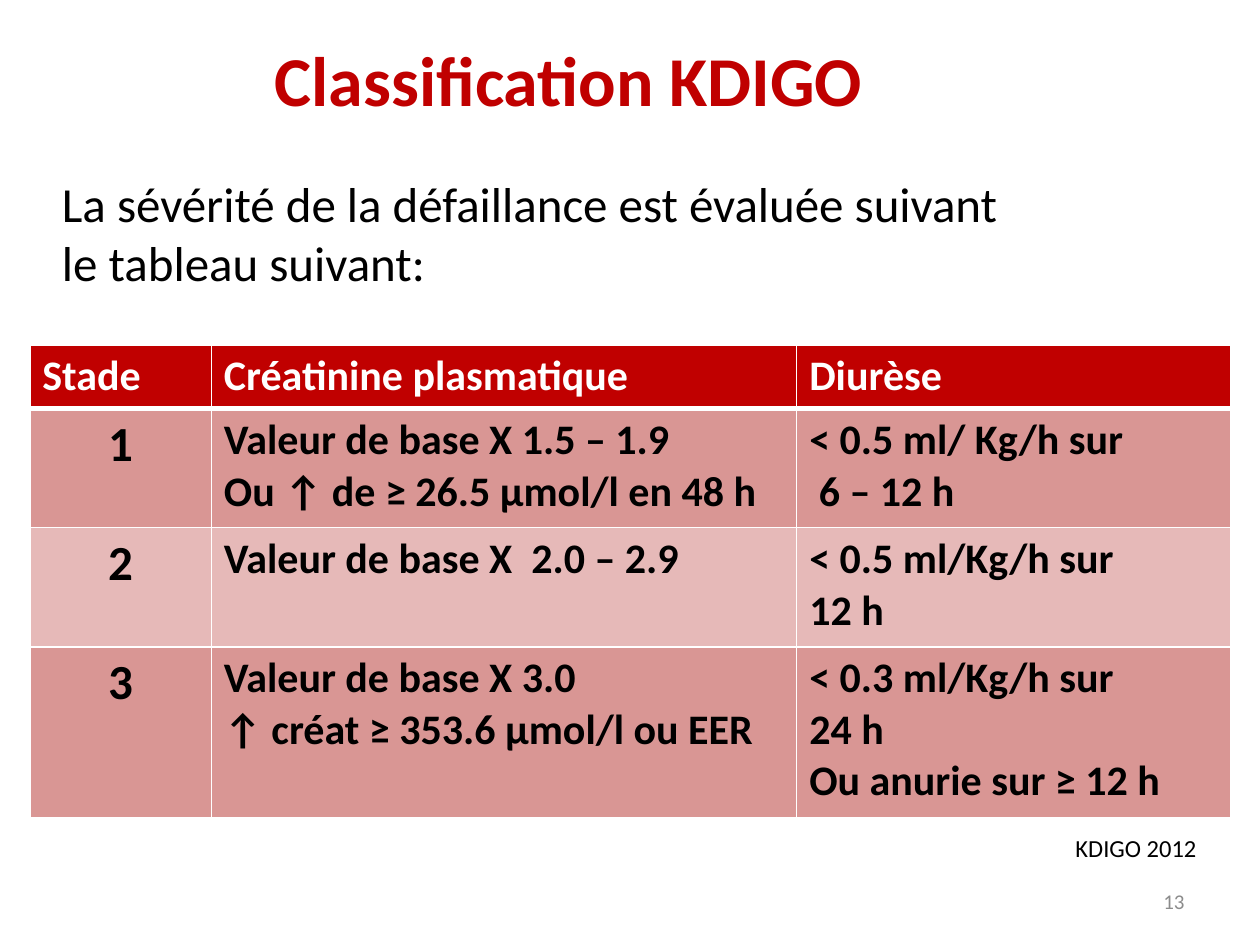
from dataclasses import dataclass

from lxml import etree
from pptx import Presentation
from pptx import util as u
from pptx.dml.color import RGBColor
from pptx.enum import text
from pptx.oxml import ns

RED = RGBColor(0xC0, 0x00, 0x00)
ROSE = RGBColor(0xD9, 0x96, 0x94)
PALE_ROSE = RGBColor(0xE6, 0xB9, 0xB8)
WHITE = RGBColor(0xFF, 0xFF, 0xFF)
BLACK = RGBColor(0x00, 0x00, 0x00)
GREY = RGBColor(0x8C, 0x8C, 0x8C)
FONT = "Calibri"
LEFT, CENTER, RIGHT = text.PP_ALIGN.LEFT, text.PP_ALIGN.CENTER, text.PP_ALIGN.RIGHT
TOP, MIDDLE = text.MSO_ANCHOR.TOP, text.MSO_ANCHOR.MIDDLE


@dataclass(frozen=True)
class Area:
    left: float
    top: float
    width: float
    height: float

    def lengths(self) -> tuple:
        return tuple(u.Cm(v) for v in (self.left, self.top, self.width, self.height))


@dataclass(frozen=True)
class Stage:
    cells: tuple
    height: float
    fill: RGBColor


COLUMN_WIDTHS = (3.66, 11.8, 8.75)
HEADER = Stage(("Stade", "Créatinine plasmatique", "Diurèse"), 1.27, RED)
STAGES = (
    Stage(("1", "Valeur de base X 1.5 – 1.9\nOu ↑ de ≥ 26.5 µmol/l en 48 h",
           "< 0.5 ml/ Kg/h sur\n 6 – 12 h"), 2.4, ROSE),
    Stage(("2", "Valeur de base X  2.0 – 2.9",
           "< 0.5 ml/Kg/h sur\n12 h"), 2.4, PALE_ROSE),
    Stage(("3", "Valeur de base X 3.0\n↑ créat ≥ 353.6 µmol/l ou EER",
           "< 0.3 ml/Kg/h sur\n24 h\nOu anurie sur ≥ 12 h"), 3.45, ROSE),
)


def write(frame, content: str, *, size: float, color: RGBColor = BLACK,
          bold: bool = False, align=LEFT) -> None:
    for index, line in enumerate(content.split("\n")):
        para = frame.add_paragraph() if index else frame.paragraphs[0]
        para.alignment = align
        span = para.add_run()
        span.text = line
        span.font.name = FONT
        span.font.size = u.Pt(size)
        span.font.bold = bold
        span.font.color.rgb = color


def add_text(page, area: Area, content: str, *, anchor=TOP, wrap: bool = True,
             **style) -> None:
    box = page.shapes.add_textbox(*area.lengths())
    box.text_frame.word_wrap = wrap
    box.text_frame.vertical_anchor = anchor
    write(box.text_frame, content, **style)


def add_borders(cell, **widths: float) -> None:
    properties = cell._tc.get_or_add_tcPr()
    for side in "LRTB":
        line = etree.SubElement(properties, ns.qn(f"a:ln{side}"),
                                w=str(u.Pt(widths.get(side, 1))))
        fill = etree.SubElement(line, ns.qn("a:solidFill"))
        etree.SubElement(fill, ns.qn("a:srgbClr"), val=str(WHITE))


def add_stage_table(page, area: Area) -> None:
    rows = (HEADER, *STAGES)
    table = page.shapes.add_table(len(rows), len(COLUMN_WIDTHS), *area.lengths()).table
    for column, width in zip(table.columns, COLUMN_WIDTHS):
        column.width = u.Cm(width)
    for row_index, stage in enumerate(rows):
        table.rows[row_index].height = u.Cm(stage.height)
        is_header = stage is HEADER
        borders = {"B": 3} if is_header else {"T": 3} if row_index == 1 else {}
        for column_index, content in enumerate(stage.cells):
            cell = table.cell(row_index, column_index)
            add_borders(cell, **borders)
            cell.fill.solid()
            cell.fill.fore_color.rgb = stage.fill
            is_number = column_index == 0 and not is_header
            write(cell.text_frame, content, bold=True,
                  size=28 if is_number else 24,
                  color=WHITE if is_header else BLACK,
                  align=CENTER if is_number else LEFT)


def add_title(page, area: Area, content: str) -> None:
    title = page.shapes.title
    title.left, title.top, title.width, title.height = area.lengths()
    title.text_frame.vertical_anchor = MIDDLE
    write(title.text_frame, content, size=40, color=RED, bold=True, align=CENTER)


def main() -> None:
    deck = Presentation()
    deck.slide_width, deck.slide_height = u.Cm(25.4), u.Cm(19.05)
    page = deck.slides.add_slide(deck.slide_layouts[5])
    add_title(page, Area(1.09, 0, 20.75, 3.18), "Classification KDIGO")
    add_stage_table(page, Area(0.6, 6.95, sum(COLUMN_WIDTHS), 9.52))
    add_text(page, Area(18.2, 17.66, 5.93, 1.01), "13",
             size=12, color=GREY, align=RIGHT, anchor=MIDDLE)
    add_text(page, Area(1, 3.38, 23, 2.65),
             "La sévérité de la défaillance est évaluée suivant\nle tableau suivant:",
             size=28)
    add_text(page, Area(21.43, 16.66, 3.35, 0.86), "KDIGO 2012", size=14, wrap=False)
    deck.save("out.pptx")


if __name__ == "__main__":
    main()
